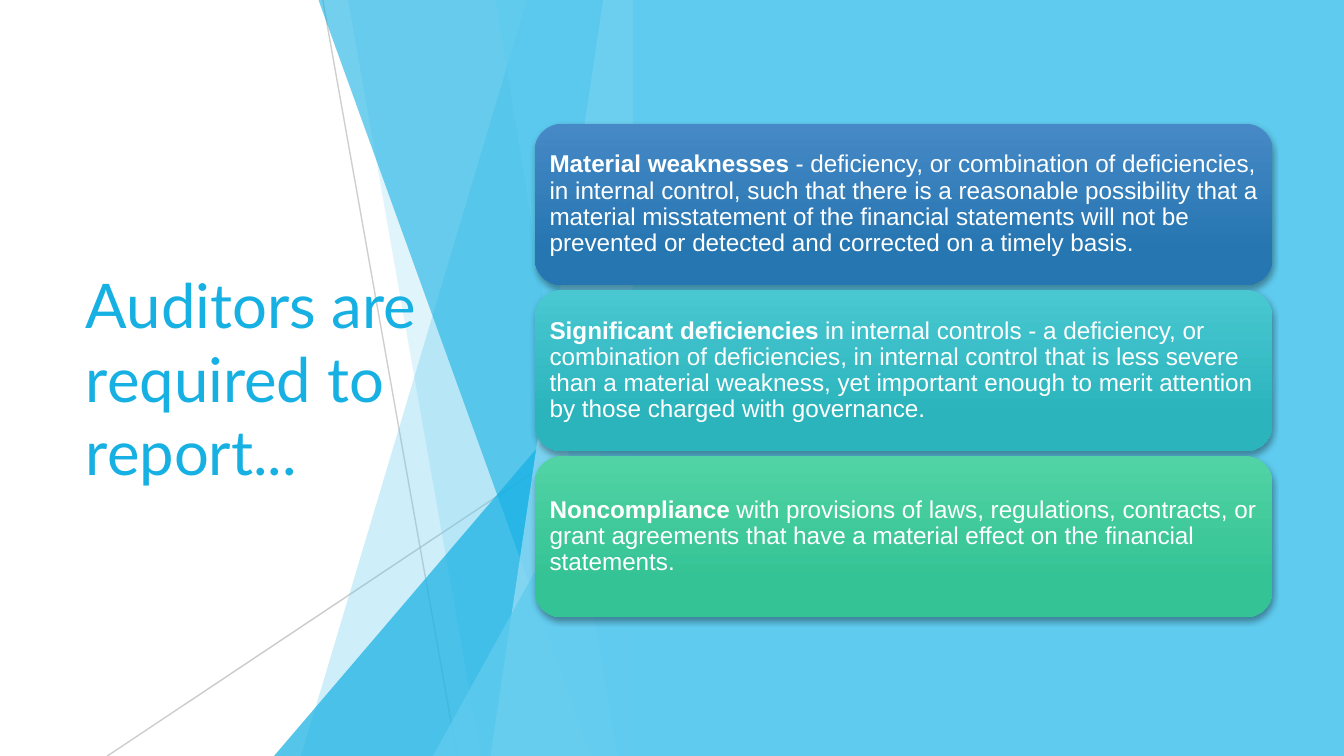
from lxml import etree
from pptx import Presentation
from pptx.dml.color import RGBColor
from pptx.enum.shapes import MSO_CONNECTOR, MSO_SHAPE
from pptx.enum.text import MSO_ANCHOR, MSO_AUTO_SIZE, PP_ALIGN
from pptx.oxml.ns import qn
from pptx.util import Cm, Pt

STRAIGHT = MSO_CONNECTOR.STRAIGHT
RECTANGLE = MSO_SHAPE.RECTANGLE
ROUNDED_RECTANGLE = MSO_SHAPE.ROUNDED_RECTANGLE
TRIANGLE = MSO_SHAPE.ISOSCELES_TRIANGLE
MIDDLE = MSO_ANCHOR.MIDDLE
NO_AUTOFIT = MSO_AUTO_SIZE.NONE
LEFT = PP_ALIGN.LEFT

WHITE = RGBColor(0xFF, 0xFF, 0xFF)
BLACK = RGBColor(0x00, 0x00, 0x00)
GRAY = RGBColor(0xBF, 0xBF, 0xBF)
SKY = RGBColor(0x5F, 0xCB, 0xEF)
PALE_SKY = RGBColor(0x9E, 0xDF, 0xF5)
CYAN = RGBColor(0x16, 0xB0, 0xE3)
BLUE_TOP = RGBColor(0x46, 0x89, 0xC6)
BLUE = RGBColor(0x26, 0x76, 0xB1)
TEAL_TOP = RGBColor(0x49, 0xC8, 0xD1)
TEAL = RGBColor(0x2B, 0xB4, 0xBC)
GREEN_TOP = RGBColor(0x51, 0xD3, 0xA5)
GREEN = RGBColor(0x34, 0xC3, 0x94)

SLIDE_WIDTH, SLIDE_HEIGHT = 25.4, 14.29
PANEL_LEFT = 11.96


def set_alpha(color_parent, percent):
    """Make the colour inside a solid fill or a shadow partly transparent."""
    color = next(color_parent.iter(qn("a:srgbClr")))
    etree.SubElement(color, qn("a:alpha")).set("val", str(percent * 1000))


def set_format(target, values):
    for name, value in values.items():
        setattr(target, name, value)


presentation = Presentation()
presentation.slide_width = Cm(SLIDE_WIDTH)
presentation.slide_height = Cm(SLIDE_HEIGHT)
slide = presentation.slides.add_slide(presentation.slide_layouts[5])
shapes = slide.shapes

# Thin lines behind the facets: start, end, opacity
for start_x, start_y, end_x, end_y, opacity in (
    (6.1, 0, 8.64, SLIDE_HEIGHT, 75),
    (PANEL_LEFT, 7.67, 2.03, SLIDE_HEIGHT, 80),
):
    connector = shapes.add_connector(
        STRAIGHT, Cm(start_x), Cm(start_y), Cm(end_x), Cm(end_y)
    )
    connector.line.width = Pt(0.75)
    connector.line.color.rgb = GRAY
    properties = connector._element.spPr
    set_alpha(properties, opacity)
    etree.SubElement(properties, qn("a:effectLst"))

# Facets end at the panel: top left x, bottom left x, top y, colour, opacity
for top_x, bottom_x, top_y, color, opacity in (
    (9.96, 5.69, 0, SKY, 30),
    (6.58, 9.09, 0, SKY, 20),
    (PANEL_LEFT, 5.18, 6.35, CYAN, 72),
    (6.02, 11.18, 0, CYAN, 60),
    (11.4, 9.27, 0, PALE_SKY, 70),
    (9.37, 11.66, 0, SKY, 65),
    (PANEL_LEFT, 8.18, 7.47, SKY, 80),
):
    if top_x == PANEL_LEFT:
        facet = shapes.add_shape(
            TRIANGLE, Cm(bottom_x), Cm(top_y),
            Cm(PANEL_LEFT - bottom_x), Cm(SLIDE_HEIGHT - top_y),
        )
        facet.adjustments[0] = 1
    else:
        builder = shapes.build_freeform(Cm(top_x), Cm(top_y))
        builder.add_line_segments([
            (Cm(PANEL_LEFT), Cm(top_y)),
            (Cm(PANEL_LEFT), Cm(SLIDE_HEIGHT)),
            (Cm(bottom_x), Cm(SLIDE_HEIGHT)),
        ])
        facet = builder.convert_to_shape()
    facet.shadow.inherit = False
    facet.line.fill.background()
    facet.fill.solid()
    facet.fill.fore_color.rgb = color
    set_alpha(facet._element.spPr, opacity)

# Title, brought in front of the facets
title = shapes.title
title._element.getparent().append(title._element)
set_format(title, {
    "left": Cm(1.37), "top": Cm(2.87), "width": Cm(7.39), "height": Cm(8.53),
})
title.text_frame.text = "Auditors are required to report..."
set_format(title.text_frame, {
    "word_wrap": True, "auto_size": NO_AUTOFIT, "vertical_anchor": MIDDLE,
})
paragraph = title.text_frame.paragraphs[0]
paragraph.alignment = LEFT
set_format(paragraph.runs[0].font, {"name": "Lato", "size": Pt(33)})
paragraph.runs[0].font.color.rgb = CYAN

panel = shapes.add_shape(
    RECTANGLE, Cm(PANEL_LEFT), 0, Cm(SLIDE_WIDTH - PANEL_LEFT), Cm(SLIDE_HEIGHT)
)
panel.shadow.inherit = False
panel.line.fill.background()
panel.fill.solid()
panel.fill.fore_color.rgb = SKY

# Cards: gradient colours, bold lead, remaining text
cards = (
    (BLUE_TOP, BLUE, "Material weaknesses ",
     "- deficiency, or combination of deficiencies, in internal control, such "
     "that there is a reasonable possibility that a material misstatement of "
     "the financial statements will not be prevented or detected and "
     "corrected on a timely basis."),
    (TEAL_TOP, TEAL, "Significant deficiencies",
     " in internal controls - a deficiency, or combination of deficiencies, "
     "in internal control that is less severe than a material weakness, yet "
     "important enough to merit attention by those charged with governance."),
    (GREEN_TOP, GREEN, "Noncompliance ",
     "with provisions of laws, regulations, contracts, or grant agreements "
     "that have a material effect on the financial statements."),
)
CARD_TOP, CARD_PITCH = 2.34, 3.14
INSET = Cm(0.13)

for index, (top_color, bottom_color, lead, detail) in enumerate(cards):
    card = shapes.add_shape(
        ROUNDED_RECTANGLE, Cm(10.11), Cm(CARD_TOP + index * CARD_PITCH),
        Cm(13.94), Cm(3.05),
    )
    card.line.fill.background()
    card.fill.gradient()
    card.fill.gradient_angle = 270
    for stop, position, color in zip(
        card.fill.gradient_stops, (0, 0.78), (top_color, bottom_color)
    ):
        stop.position = position
        stop.color.rgb = color

    card.shadow.inherit = False
    effects = card._element.spPr.find(qn("a:effectLst"))
    shadow = etree.SubElement(effects, qn("a:outerShdw"))
    for name, value in {
        "blurRad": Pt(3), "dist": Pt(2), "dir": 90 * 60000, "rotWithShape": 0,
    }.items():
        shadow.set(name, str(int(value)))
    etree.SubElement(shadow, qn("a:srgbClr")).set("val", str(BLACK))
    set_alpha(shadow, 35)

    set_format(card.text_frame, {
        "word_wrap": True, "vertical_anchor": MIDDLE,
        "margin_left": INSET, "margin_right": INSET,
        "margin_top": INSET, "margin_bottom": INSET,
    })
    paragraph = card.text_frame.paragraphs[0]
    set_format(paragraph, {"alignment": LEFT, "line_spacing": 0.9})
    for text, bold in ((lead, True), (detail, False)):
        run = paragraph.add_run()
        run.text = text
        set_format(run.font, {"name": "Arial", "size": Pt(13), "bold": bold})
        run.font.color.rgb = WHITE

presentation.save("out.pptx")
